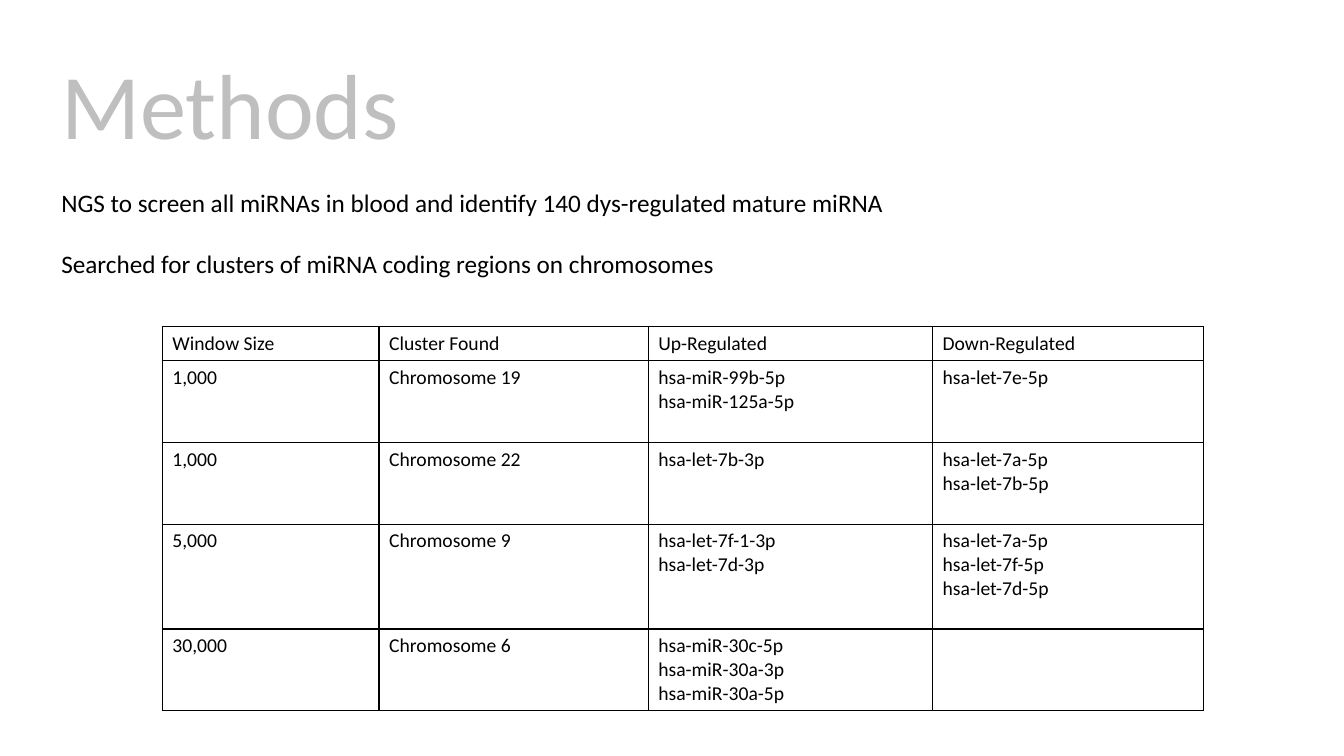
import pptx
import pptx.util
import pptx.dml.color
import pptx.enum.text
import pptx.oxml
import pptx.oxml.ns

Inches, Pt = pptx.util.Inches, pptx.util.Pt
TEXT = pptx.enum.text

FONT = "Calibri"
BLACK, GREY = "000000", "BFBFBF"
COLUMN_WIDTHS = [2.15, 2.67, 2.82, 2.69]
ROW_HEIGHTS = [0.34, 0.81, 0.81, 1.04, 0.81]
STATEMENTS = [
    "NGS to screen all miRNAs in blood and identify 140 dys-regulated mature miRNA",
    "Searched for clusters of miRNA coding regions on chromosomes",
]
CLUSTERS = [
    ["Window Size", "Cluster Found", "Up-Regulated", "Down-Regulated"],
    ["1,000", "Chromosome 19", "hsa-miR-99b-5p\nhsa-miR-125a-5p", "hsa-let-7e-5p"],
    ["1,000", "Chromosome 22", "hsa-let-7b-3p", "hsa-let-7a-5p\nhsa-let-7b-5p"],
    ["5,000", "Chromosome 9", "hsa-let-7f-1-3p\nhsa-let-7d-3p",
     "hsa-let-7a-5p\nhsa-let-7f-5p\nhsa-let-7d-5p"],
    ["30,000", "Chromosome 6", "hsa-miR-30c-5p\nhsa-miR-30a-3p\nhsa-miR-30a-5p", ""],
]


def color(value):
    return pptx.dml.color.RGBColor.from_string(value)


def style_text(frame, size, value):
    for para in frame.paragraphs:
        para.alignment = TEXT.PP_ALIGN.LEFT
        para.font.name = FONT
        para.font.size = Pt(size)
        para.font.color.rgb = color(value)


def add_title(page, left, top, width, height):
    title = page.shapes.title
    title.left, title.top = Inches(left), Inches(top)
    title.width, title.height = Inches(width), Inches(height)
    frame = title.text_frame
    frame.text = "Methods"
    frame.auto_size = TEXT.MSO_AUTO_SIZE.NONE
    frame.vertical_anchor = TEXT.MSO_ANCHOR.MIDDLE
    frame.paragraphs[0].line_spacing = 0.9
    style_text(frame, 66, GREY)


def add_statements(page, left, top, width, height):
    box = page.shapes.add_textbox(*map(Inches, (left, top, width, height)))
    frame = box.text_frame
    frame.word_wrap = True
    frame.text = "\n".join(STATEMENTS)
    frame.paragraphs[1].space_before = Pt(22)
    style_text(frame, 18, BLACK)


def outline_cell(cell, value, points):
    properties = cell._tc.get_or_add_tcPr()
    for position, side in enumerate(("lnL", "lnR", "lnT", "lnB")):
        line = pptx.oxml.parse_xml(
            f'<a:{side} {pptx.oxml.ns.nsdecls("a")} w="{Pt(points)}">'
            f'<a:solidFill><a:srgbClr val="{value}"/></a:solidFill></a:{side}>')
        properties.insert(position, line)


def add_cluster_table(page, left, top):
    holder = page.shapes.add_table(
        len(ROW_HEIGHTS), len(COLUMN_WIDTHS), Inches(left), Inches(top),
        Inches(sum(COLUMN_WIDTHS)), Inches(sum(ROW_HEIGHTS)))
    table = holder.table
    table.first_row = table.horz_banding = False
    for column, width in zip(table.columns, COLUMN_WIDTHS):
        column.width = Inches(width)
    for row, height, texts in zip(table.rows, ROW_HEIGHTS, CLUSTERS):
        row.height = Inches(height)
        for cell, text in zip(row.cells, texts):
            cell.text = text
            cell.fill.background()
            outline_cell(cell, BLACK, 1)
            style_text(cell.text_frame, 14, BLACK)


def main():
    deck = pptx.Presentation()
    deck.slide_width, deck.slide_height = Inches(13.33), Inches(7.5)
    page = deck.slides.add_slide(deck.slide_layouts.get_by_name("Title Only"))
    add_title(page, 0.51, 0.36, 11.5, 1.45)
    add_statements(page, 0.51, 1.81, 11.13, 1.01)
    add_cluster_table(page, 1.61, 3.24)
    deck.save("out.pptx")


if __name__ == "__main__":
    main()
